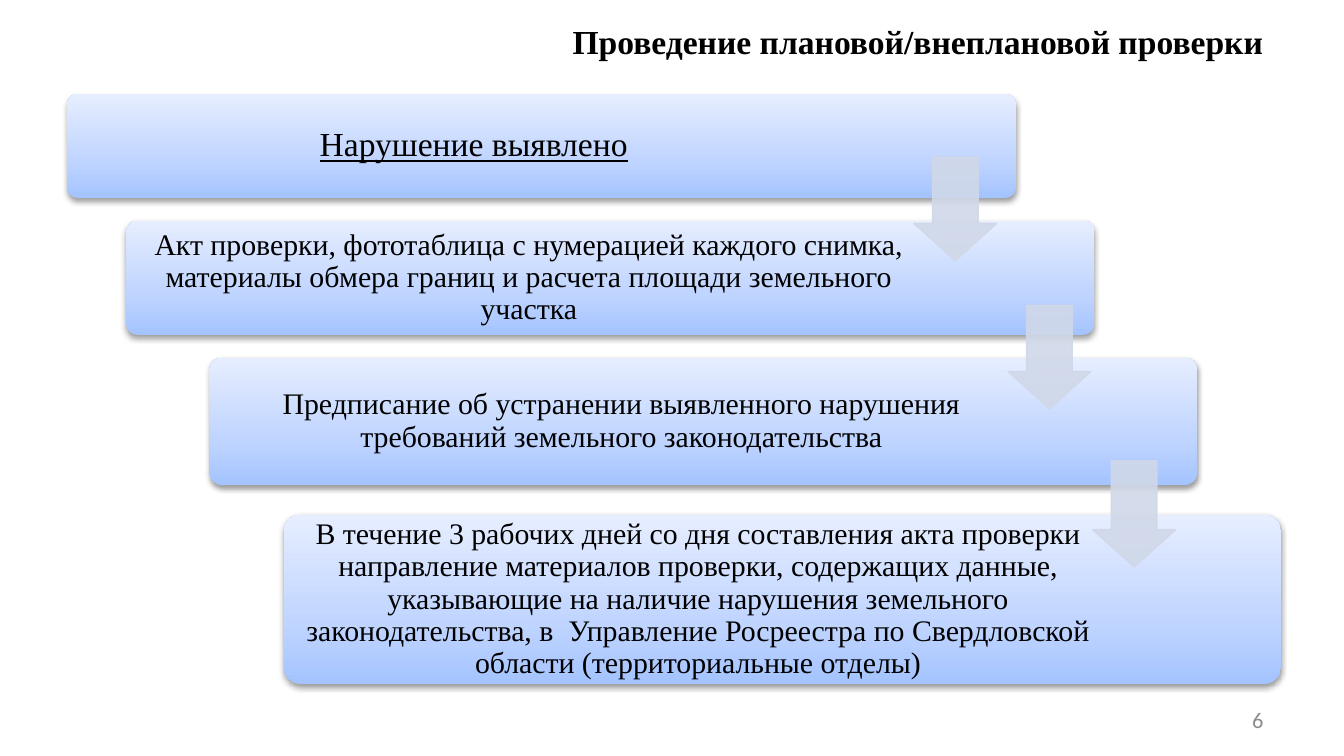
from copy import deepcopy

from pptx import Presentation
from pptx.dml.color import RGBColor
from pptx.enum.shapes import MSO_SHAPE as Shape
from pptx.enum.text import MSO_ANCHOR as Anchor, PP_ALIGN as Align
from pptx.oxml import parse_xml
from pptx.oxml.ns import nsdecls
from pptx.util import Cm, Pt

SERIF = "Times New Roman"
SHADE = [(0, "A4C4FF"), (0.35, "BFD4FF"), (1, "E6EEFF")]
STEPS = [
    (1.27, 1.78, 17.93, 1.96, 15.37, 18, "Нарушение выявлено"),
    (2.39, 4.17, 18.29, 2.16, 15.21, 16,
     "Акт проверки, фототаблица с нумерацией каждого снимка, "
     "материалы обмера границ и расчета площади земельного участка"),
    (3.96, 6.76, 18.67, 2.41, 15.57, 16,
     "Предписание об устранении выявленного нарушения "
     "требований земельного законодательства"),
    (5.36, 9.73, 18.85, 3.2, 15.67, 16,
     "В течение 3 рабочих дней со дня составления акта проверки "
     "направление материалов проверки, содержащих данные, "
     "указывающие на наличие нарушения земельного законодательства, "
     "в  Управление Росреестра по Свердловской области "
     "(территориальные отделы)"),
]
ARROWS = [(17.27, 2.97, 1.96), (19.05, 5.77, 1.96), (20.65, 8.71, 2.01)]


def paint(hue):
    """Return the colour for a hex string."""
    return RGBColor.from_string(hue)


def write(shape, text, size, align, face=SERIF, hue="000000"):
    """Put one formatted paragraph in a shape and return it."""
    frame = shape.text_frame
    frame.word_wrap = True
    frame.vertical_anchor = Anchor.MIDDLE
    para = frame.paragraphs[0]
    para.text = text
    para.alignment = align
    font = para.font
    font.name, font.size = face, Pt(size)
    font.color.rgb = paint(hue)
    return para


def add_title(slide, text):
    """Place and fill the title."""
    title = slide.shapes.title
    title.left, title.top = Cm(1.27), Cm(0)
    title.width, title.height = Cm(22.86), Cm(1.57)
    write(title, text, 18, Align.RIGHT).font.bold = True


def shade(shape):
    """Fill a shape with the upward three-stop gradient."""
    fill = shape.fill
    fill.gradient()
    fill.gradient_angle = 90
    stops = shape._element.spPr.find(".//{*}gsLst")
    stops.insert(1, deepcopy(stops[0]))
    for stop, (pos, hue) in zip(fill.gradient_stops, SHADE):
        stop.position = pos
        stop.color.rgb = paint(hue)


def cast(shape):
    """Give a shape a soft shadow below it."""
    shape.shadow.inherit = False
    shape._element.spPr.find("{*}effectLst").append(parse_xml(
        f'<a:outerShdw {nsdecls("a")} blurRad="{Pt(3.1)}" dist="{Pt(1.6)}" '
        'dir="5400000" rotWithShape="0"><a:srgbClr val="000000">'
        '<a:alpha val="38000"/></a:srgbClr></a:outerShdw>'))


def add_step(slide, left, top, width, height, span, size, text):
    """Draw a step bar with its text and return the paragraph."""
    bar = slide.shapes.add_shape(
        Shape.ROUNDED_RECTANGLE, Cm(left), Cm(top), Cm(width), Cm(height))
    bar.adjustments[0] = 0.1
    bar.line.fill.background()
    shade(bar)
    cast(bar)
    box = slide.shapes.add_textbox(Cm(left), Cm(top), Cm(span), Cm(height))
    frame = box.text_frame
    frame.margin_left = frame.margin_right = Cm(0.18)
    frame.margin_top = frame.margin_bottom = Cm(0.18)
    para = write(box, text, size, Align.CENTER)
    para.line_spacing = 0.9
    return para


def add_arrow(slide, left, top, height):
    """Draw a translucent down arrow."""
    arrow = slide.shapes.add_shape(
        Shape.DOWN_ARROW, Cm(left), Cm(top), Cm(1.57), Cm(height))
    arrow.adjustments[0], arrow.adjustments[1] = 0.55, 0.45
    arrow.shadow.inherit = False
    arrow.fill.solid()
    arrow.fill.fore_color.rgb = paint("D0D8E8")
    arrow.line.color.rgb = paint("D0D8E8")
    arrow.line.width = Pt(0.75)
    for tint in arrow._element.spPr.findall(".//{*}srgbClr"):
        tint.append(parse_xml(f'<a:alpha {nsdecls("a")} val="90000"/>'))


def add_number(slide, text):
    """Write the page number."""
    box = slide.shapes.add_textbox(Cm(18.21), Cm(13.23), Cm(5.92), Cm(0.76))
    write(box, text, 12, Align.RIGHT, "Calibri", "8C8C8C")


def main():
    """Build and save the slide."""
    deck = Presentation()
    deck.slide_width, deck.slide_height = Cm(25.4), Cm(14.29)
    slide = deck.slides.add_slide(deck.slide_layouts[5])
    add_title(slide, "Проведение плановой/внеплановой проверки")
    paras = [add_step(slide, *step) for step in STEPS]
    paras[0].font.underline = True
    for arrow in ARROWS:
        add_arrow(slide, *arrow)
    add_number(slide, "6")
    deck.save("out.pptx")


if __name__ == "__main__":
    main()
